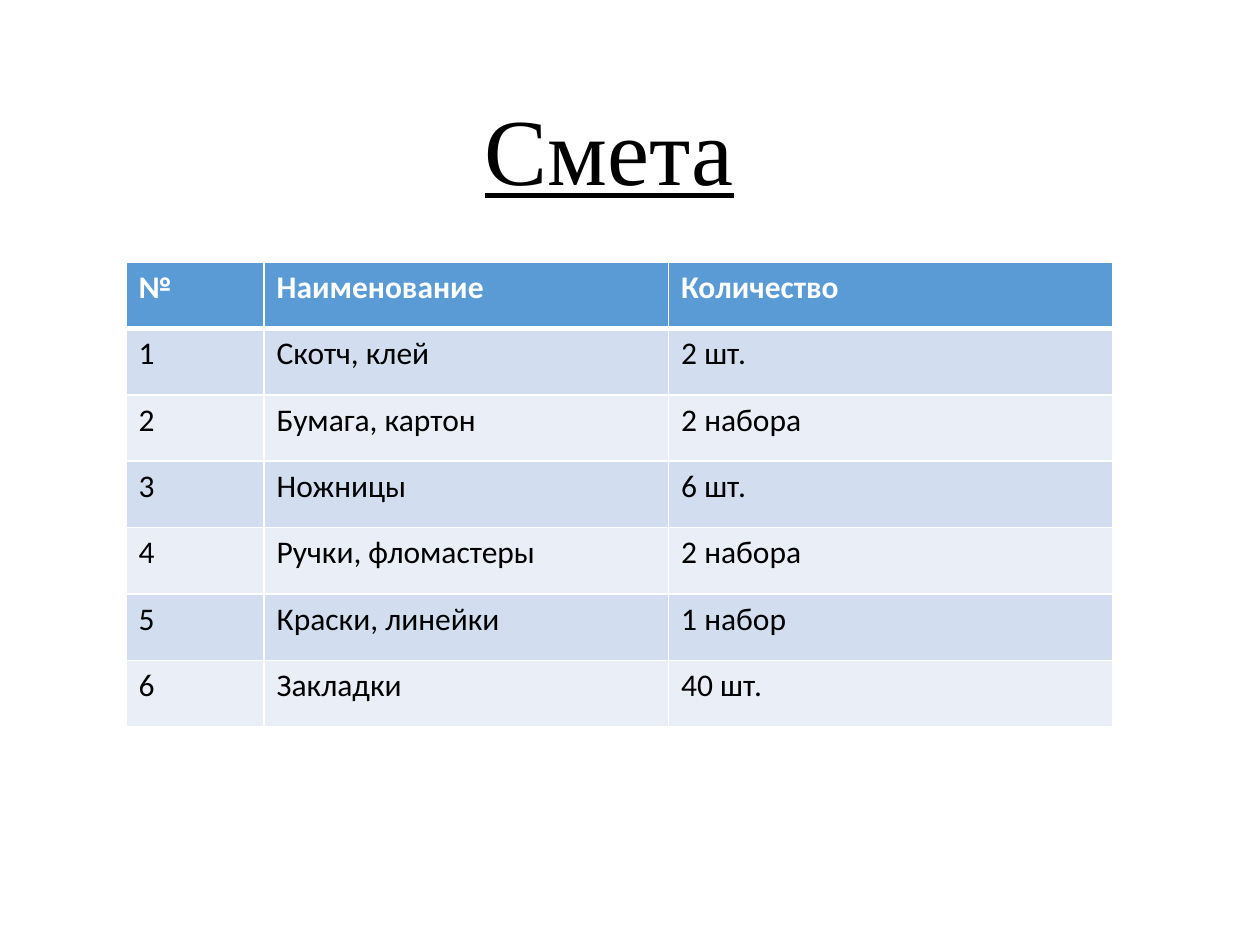
from lxml import etree
from pptx import Presentation
from pptx.dml.color import RGBColor
from pptx.enum.text import MSO_ANCHOR, PP_ALIGN
from pptx.oxml.ns import qn
from pptx.util import Inches, Pt

CENTER = PP_ALIGN.CENTER
MIDDLE = MSO_ANCHOR.MIDDLE

BLACK = RGBColor(0x00, 0x00, 0x00)
WHITE = RGBColor(0xFF, 0xFF, 0xFF)
HEADER_BLUE = RGBColor(0x5B, 0x9B, 0xD5)
BANDS = (RGBColor(0xEA, 0xEF, 0xF7), RGBColor(0xD2, 0xDE, 0xEF))

TITLE_BOX = (Inches(0.25), Inches(0.42), Inches(9.17), Inches(1.62))
TABLE_BOX = (Inches(1), Inches(2.08), Inches(7.83), Inches(3.69))
COLUMN_SHARES = (0.14, 0.41, 0.45)

HEADER = ("№", "Наименование", "Количество")
ITEMS = (
    ("Скотч, клей", "2 шт."),
    ("Бумага, картон", "2 набора"),
    ("Ножницы", "6 шт."),
    ("Ручки, фломастеры", "2 набора"),
    ("Краски, линейки", "1 набор"),
    ("Закладки", "40 шт."),
)


def add_run(p, text, font, size, color):
    r = p.add_run()
    r.text = text
    r.font.name = font
    r.font.size = Pt(size)
    r.font.color.rgb = color
    return r


def set_title(slide, box, text):
    sp = slide.shapes.title
    sp.left, sp.top, sp.width, sp.height = box
    tf = sp.text_frame
    tf.word_wrap = True
    tf.vertical_anchor = MIDDLE
    p = tf.paragraphs[0]
    p.alignment = CENTER
    p.line_spacing = 0.9
    add_run(p, text, "Times New Roman", 54, BLACK).font.underline = True


def set_borders(cell, top, bottom):
    """White cell borders; must be called before the cell gets its fill."""
    tcPr = cell._tc.get_or_add_tcPr()
    for side, width in (("L", 1), ("R", 1), ("T", top), ("B", bottom)):
        ln = etree.SubElement(tcPr, qn("a:ln" + side), w=str(Pt(width)))
        fill = etree.SubElement(ln, qn("a:solidFill"))
        etree.SubElement(fill, qn("a:srgbClr"), val=str(WHITE))


def add_estimate_table(slide, box, rows):
    table = slide.shapes.add_table(len(rows), len(COLUMN_SHARES), *box).table
    for column, share in zip(table.columns, COLUMN_SHARES):
        column.width = int(box[2] * share)
    for i, values in enumerate(rows):
        is_header = i == 0
        table.rows[i].height = box[3] // len(rows)
        for cell, value in zip(table.rows[i].cells, values):
            set_borders(cell, 3 if i == 1 else 1, 3 if is_header else 1)
            cell.fill.solid()
            cell.fill.fore_color.rgb = HEADER_BLUE if is_header else BANDS[i % 2]
            r = add_run(cell.text_frame.paragraphs[0], value, "Calibri", 18,
                        WHITE if is_header else BLACK)
            r.font.bold = is_header


def main():
    prs = Presentation()
    prs.slide_width, prs.slide_height = Inches(10), Inches(7.5)
    slide = prs.slides.add_slide(prs.slide_layouts[5])
    set_title(slide, TITLE_BOX, "Смета")
    numbered = [(str(n), *item) for n, item in enumerate(ITEMS, 1)]
    add_estimate_table(slide, TABLE_BOX, [HEADER, *numbered])
    prs.save("out.pptx")


if __name__ == "__main__":
    main()
